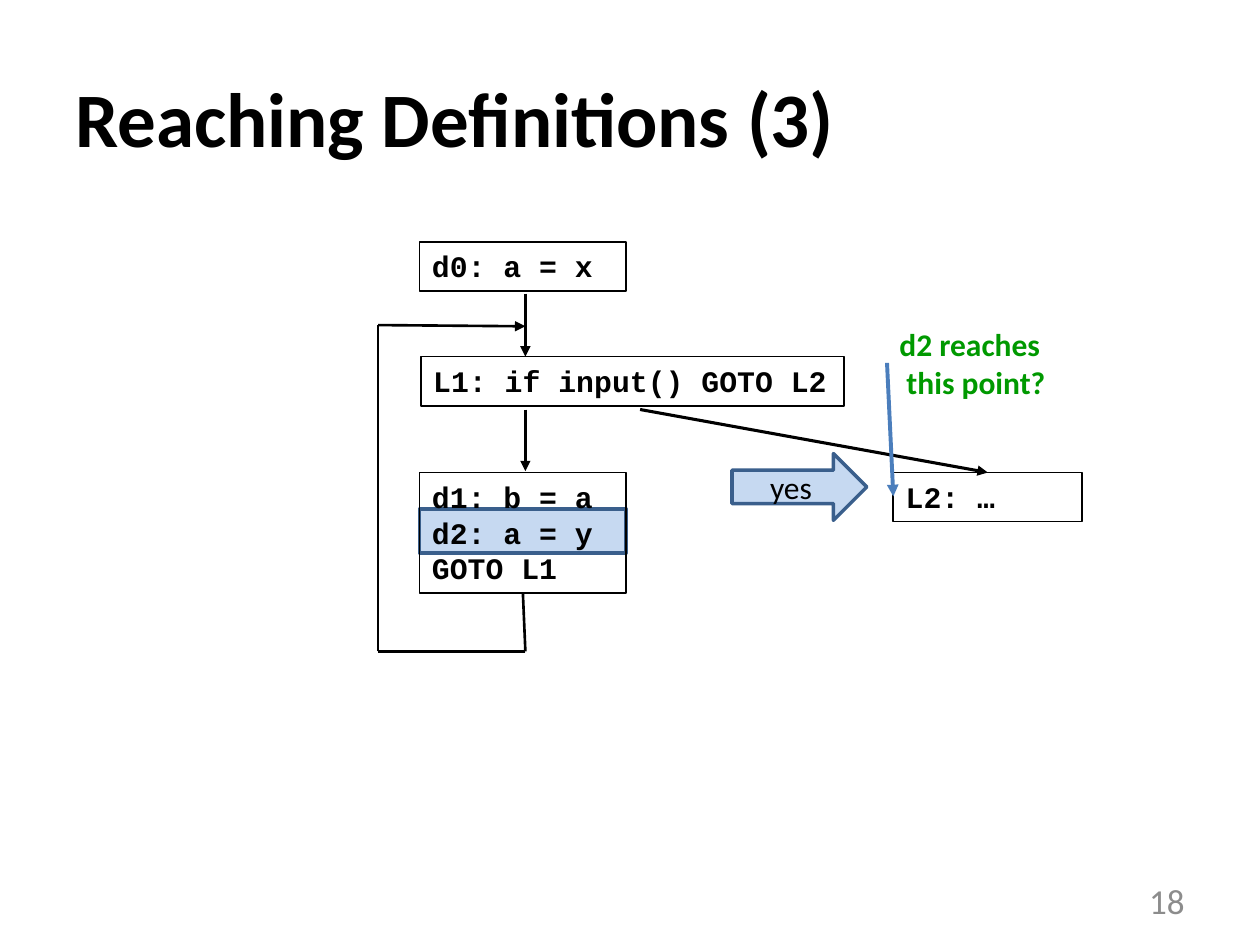
"""Build the slide that asks whether definition d2 reaches L2."""
from itertools import pairwise

from lxml.etree import SubElement
from pptx import Presentation
from pptx.dml.color import RGBColor
from pptx.enum.shapes import MSO_CONNECTOR as Connector, MSO_SHAPE as Shape
from pptx.enum.text import MSO_ANCHOR as Anchor, PP_ALIGN as Align
from pptx.oxml.ns import qn
from pptx.util import Inches, Pt

BLACK, GREEN, GRAY = "000000", "009900", "8C8C8C"
PALE, NAVY, BLUE = "C6D9F1", "3A5F8C", "4B7EBC"


def color(value):
    return RGBColor.from_string(value)


def write(shape, text, font="Calibri", size=18, fill=BLACK, bold=False,
          align=Align.LEFT, anchor=Anchor.TOP):
    frame = shape.text_frame
    frame.word_wrap = True
    frame.vertical_anchor = anchor
    frame.margin_right = Inches(0.1 if align == Align.RIGHT else 0)
    if align == Align.CENTER:
        frame.margin_left = 0
    frame.text = text
    for paragraph in frame.paragraphs:
        paragraph.alignment = align
        paragraph.font.name = font
        paragraph.font.size = Pt(size)
        paragraph.font.bold = bold
        paragraph.font.color.rgb = color(fill)


class FlowSlide:
    def __init__(self, presentation):
        self.slide = presentation.slides.add_slide(presentation.slide_layouts[6])
        self.code = {"font": "Courier New", "size": 17, "bold": True}

    def label(self, text, left, top, width, height, **style):
        box = self.slide.shapes.add_textbox(*map(Inches, (left, top, width, height)))
        write(box, text, **style)

    def block(self, left, top, width, height, kind=Shape.RECTANGLE,
              fill=None, line=BLACK, weight=1):
        shape = self.slide.shapes.add_shape(
            kind, *map(Inches, (left, top, width, height)))
        shape.shadow.inherit = False
        if fill:
            shape.fill.solid()
            shape.fill.fore_color.rgb = color(fill)
        else:
            shape.fill.background()
        shape.line.color.rgb = color(line)
        shape.line.width = Pt(weight)
        return shape

    def code_block(self, text, left, top, width, height=0.39):
        write(self.block(left, top, width, height), text, **self.code)

    def edge(self, start, end, line=BLACK, weight=1.75, arrow=True):
        connector = self.slide.shapes.add_connector(
            Connector.STRAIGHT, *map(Inches, (*start, *end)))
        connector.line.color.rgb = color(line)
        connector.line.width = Pt(weight)
        if arrow:
            SubElement(connector.line._get_or_add_ln(), qn("a:tailEnd"), type="triangle")
        SubElement(connector._element.spPr, qn("a:effectLst"))


def main():
    presentation = Presentation()
    presentation.slide_width, presentation.slide_height = Inches(10), Inches(7.5)
    flow = FlowSlide(presentation)

    flow.block(3.33, 4.04, 1.64, 0.35, fill=PALE, line=NAVY, weight=2)
    flow.label("Reaching Definitions (3)", 0.5, 0.3, 9, 1.25,
               size=44, bold=True, anchor=Anchor.MIDDLE)
    flow.label("18", 7.17, 6.95, 2.33, 0.4, size=20, fill=GRAY,
               align=Align.RIGHT, anchor=Anchor.MIDDLE)

    flow.code_block("d0: a = x", 3.33, 1.92, 1.64)
    flow.code_block("L1: if input() GOTO L2", 3.34, 2.83, 3.36)
    flow.code_block("L2: …", 7.09, 3.75, 1.5)
    flow.code_block("d1: b = a\nd2: a = y\nGOTO L1", 3.33, 3.75, 1.64, 0.96)

    flow.edge((4.17, 2.33), (4.17, 2.83))
    flow.edge((4.17, 3.25), (4.17, 3.74))
    flow.edge((5.08, 3.25), (7.84, 3.75))

    loop = [(4.15, 4.71), (4.17, 5.17), (3, 5.17), (3, 2.58), (4.17, 2.59)]
    for start, end in pairwise(loop):
        flow.edge(start, end, weight=1.5, arrow=end == loop[-1])

    flow.label("d2 reaches\n this point?", 7.04, 2.53, 1.37, 0.71,
               fill=GREEN, bold=True)
    answer = flow.block(5.81, 3.6, 1.07, 0.53, Shape.RIGHT_ARROW, PALE, NAVY, 2)
    write(answer, "yes", align=Align.CENTER, anchor=Anchor.MIDDLE)
    flow.edge((7.04, 2.88), (7.09, 3.94), line=BLUE, weight=2.25)

    presentation.save("out.pptx")


if __name__ == "__main__":
    main()
